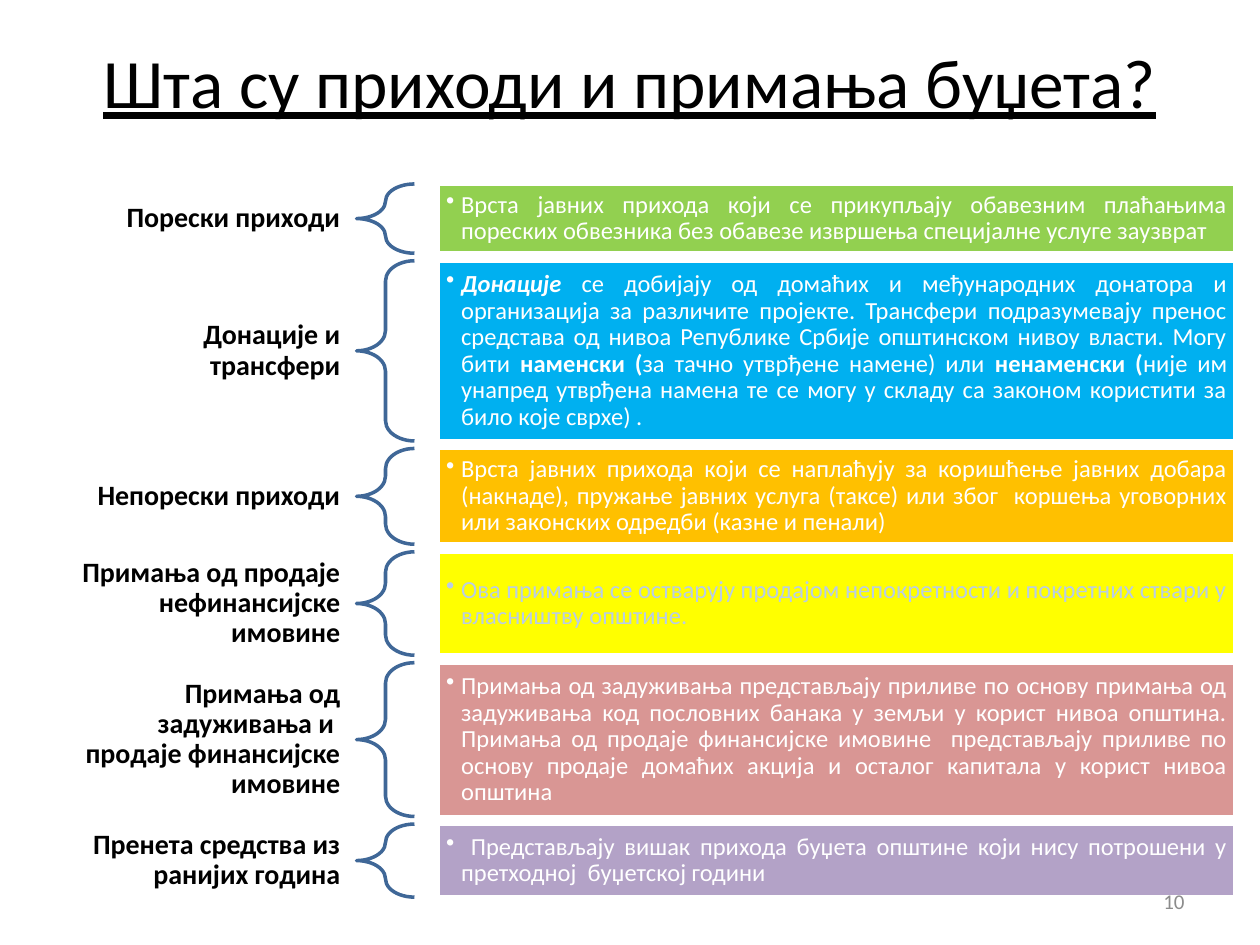
"""Build the slide that explains the kinds of budget revenue."""
from lxml.etree import SubElement
from pptx import Presentation
from pptx.dml.color import RGBColor
from pptx.enum.shapes import MSO_SHAPE as Shape
from pptx.enum.text import MSO_ANCHOR as Anchor, PP_ALIGN as Align
from pptx.oxml.ns import qn
from pptx.util import Inches, Pt

COLORS = {
    "black": "000000", "white": "FFFFFF", "brace": "3F6797", "number": "8C8C8C",
    "green": "92D050", "blue": "00B0F0", "orange": "FFC000", "yellow": "FFFF00",
    "rose": "D99694", "violet": "B3A2C7", "pale": "B9CDE5",
}
TITLE = "Шта су приходи и примања буџета?"
PAGE_NUMBER = "10"

# Each row: label, label lines, height, fill, text colour, runs of (text, bold, italic)
ROWS = [
    ("Порески приходи", 1, 0.55, "green", "white", [
        ("Врста јавних прихода који се прикупљају обавезним плаћањима пореских "
         "обвезника без обавезе извршења специјалне услуге заузврат", False, False)]),
    ("Донације и трансфери", 2, 1.43, "blue", "white", [
        ("Донације ", True, True),
        ("се добијају од домаћих и међународних донатора и организација за различите "
         "пројекте. Трансфери подразумевају пренос средстава од нивоа Републике Србије "
         "општинском нивоу власти. Могу бити ", False, False),
        ("наменски (", True, False),
        ("за тачно утврђене намене) или ", False, False),
        ("ненаменски (", True, False),
        ("није им унапред утврђена намена те се могу у складу са законом користити "
         "за било које сврхе) .", False, False)]),
    ("Непорески приходи", 1, 0.76, "orange", "white", [
        ("Врста јавних прихода који се наплаћују за коришћење јавних добара (накнаде), "
         "пружање јавних услуга (таксе) или због  коршења уговорних или законских "
         "одредби (казне и пенали)", False, False)]),
    ("Примања од продаје нефинансијске имовине", 3, 0.82, "yellow", "pale", [
        ("Ова примања се остварују продајом непокретности и покретних ствари у "
         "власништву општине.", False, False)]),
    ("Примања од задуживања и  продаје финансијске имовине", 4, 1.22, "rose", "white", [
        ("Примања од задуживања представљају приливе по основу примања од задуживања "
         "код пословних банака у земљи у корист нивоа општина. Примања од продаје "
         "финансијске имовине  представљају приливе по основу продаје домаћих акција и "
         "осталог капитала у корист нивоа општина", False, False)]),
    ("Пренета средства из ранијих година", 2, 0.58, "violet", "white", [
        (" Представљају вишак прихода буџета општине који нису потрошени у "
         "претходној  буџетској години", False, False)]),
]
FIRST_TOP, ROW_GAP = 1.46, 0.06
LABEL_LEFT, LABEL_WIDTH, LABEL_PADDING, LABEL_LINE = 0.5, 2.32, 0.1, 0.24
BRACE_LEFT, BRACE_WIDTH = 2.83, 0.46
PANEL_LEFT, PANEL_WIDTH = 3.48, 6.32


def color(name):
    return RGBColor.from_string(COLORS[name])


def write(shape, runs, size, ink, align, insets=(0.1, 0.05)):
    frame = shape.text_frame
    frame.word_wrap = True
    frame.vertical_anchor = Anchor.MIDDLE
    frame.margin_left = frame.margin_right = Inches(insets[0])
    frame.margin_top = frame.margin_bottom = Inches(insets[1])
    para = frame.paragraphs[0]
    para.alignment = align
    for text, bold, italic in runs:
        span = para.add_run()
        span.text = text
        font = span.font
        font.name, font.size = "Calibri", Pt(size)
        font.bold, font.italic = bold, italic
        font.color.rgb = color(ink)
    return para


def add_text(page, place, text, size, ink, align, bold=False, **options):
    box = page.shapes.add_textbox(*map(Inches, place))
    return write(box, [(text, bold, False)], size, ink, align, **options)


def add_shape(page, kind, place, line):
    shape = page.shapes.add_shape(kind, *map(Inches, place))
    shape.shadow.inherit = False
    shape.line.color.rgb = color(line)
    shape.line.width = Pt(2)
    return shape


def add_bullet(para):
    props = para._p.get_or_add_pPr()
    props.set("marL", str(Inches(0.12)))
    props.set("indent", str(-Inches(0.12)))
    SubElement(props, qn("a:buChar"), char="•")


def add_row(page, top, label, lines, height, fill, ink, runs):
    label_height = LABEL_PADDING + LABEL_LINE * lines
    label_top = top + (height - label_height) / 2
    para = add_text(page, (LABEL_LEFT, label_top, LABEL_WIDTH, label_height), label,
                    16, "black", Align.RIGHT, bold=True, insets=(0.12, 0.04))
    para.line_spacing = 0.9

    brace = add_shape(page, Shape.LEFT_BRACE, (BRACE_LEFT, top, BRACE_WIDTH, height), "brace")
    brace.fill.background()
    brace.adjustments[0] = 0.35

    panel = add_shape(page, Shape.RECTANGLE, (PANEL_LEFT, top, PANEL_WIDTH, height), "white")
    panel.fill.solid()
    panel.fill.fore_color.rgb = color(fill)
    para = write(panel, runs, 14, ink, Align.JUSTIFY, insets=(0.06, 0.06))
    para.line_spacing = 0.9
    add_bullet(para)


def main():
    deck = Presentation()
    deck.slide_width, deck.slide_height = Inches(10), Inches(7.5)
    page = deck.slides.add_slide(deck.slide_layouts[6])

    title = add_text(page, (0.5, 0.3, 9, 0.68), TITLE, 39.6, "black", Align.CENTER)
    title.runs[0].font.underline = True

    top = FIRST_TOP
    for row in ROWS:
        add_row(page, top, *row)
        top += row[2] + ROW_GAP

    add_text(page, (7.17, 6.95, 2.33, 0.4), PAGE_NUMBER, 12, "number", Align.RIGHT)
    deck.save("out.pptx")


if __name__ == "__main__":
    main()
